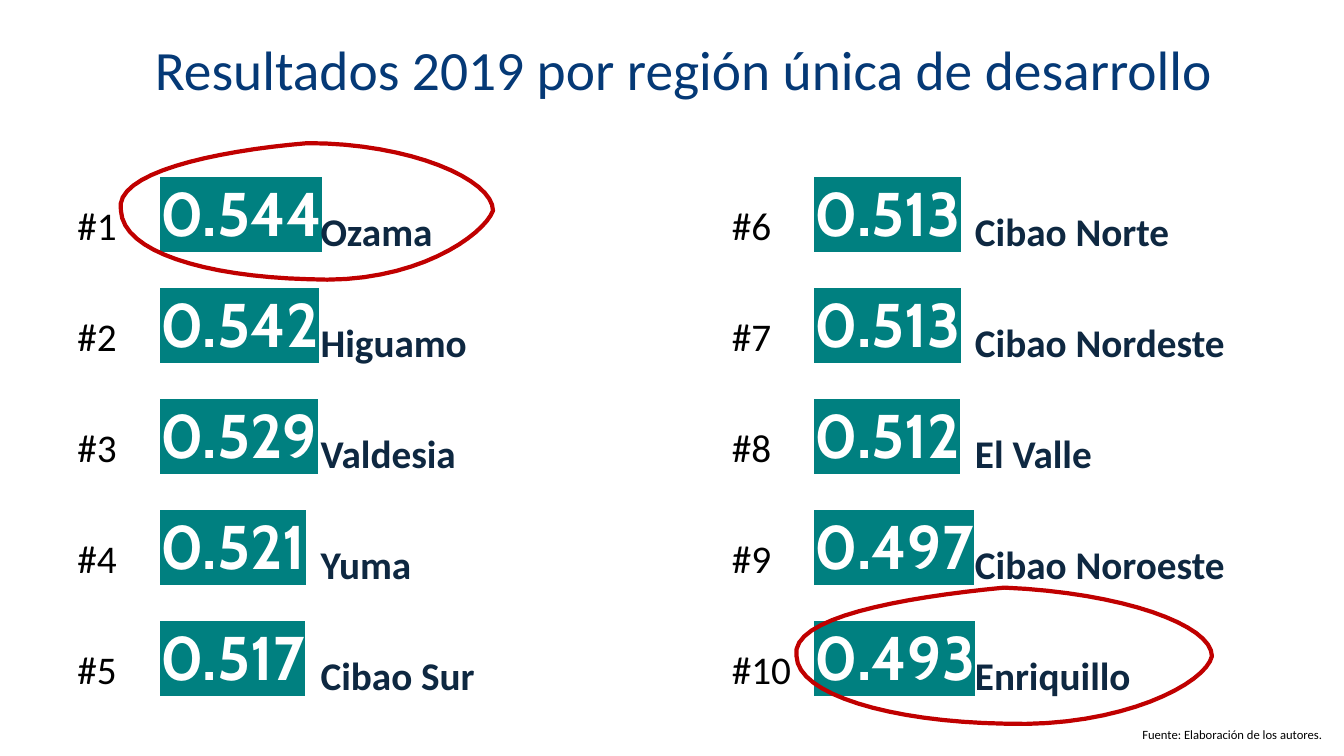
import pptx
import pptx.util
import pptx.dml.color
import pptx.enum.text
import pptx.oxml.ns
import lxml.etree

SCALE = 9144
WIDE, HIGH = 1333, 750
PITCH, STEP = 649, 110
STEPS = 16
ALIGN = pptx.enum.text.PP_ALIGN
ANCHOR = pptx.enum.text.MSO_ANCHOR

SCORES = [
    ("0.544", "Ozama"), ("0.542", "Higuamo"), ("0.529", "Valdesia"),
    ("0.521", "Yuma"), ("0.517", "Cibao Sur"), ("0.513", "Cibao Norte"),
    ("0.513", "Cibao Nordeste"), ("0.512", "El Valle"),
    ("0.497", "Cibao Noroeste"), ("0.493", "Enriquillo"),
]
OZAMA = [
    (120, 209),
    (112, 172), (211, 150), (305, 142),
    (407, 142), (489, 178), (489, 209),
    (480, 233), (412, 283), (305, 277),
    (203, 274), (122, 250), (120, 209),
]
ENRIQUILLO = [
    (790, 651),
    (783, 613), (893, 593), (996, 583),
    (1113, 588), (1202, 620), (1202, 651),
    (1196, 678), (1113, 722), (996, 718),
    (883, 716), (791, 689), (790, 651),
]


def px(count):
    return pptx.util.Emu(round(count * SCALE))


def color(code):
    return pptx.dml.color.RGBColor.from_string(code)


def style(shape, words, size, code, face="Calibri", bold=False):
    frame = shape.text_frame
    frame.text = words
    frame.word_wrap = True
    frame.auto_size = pptx.enum.text.MSO_AUTO_SIZE.NONE
    para = frame.paragraphs[0]
    font = para.runs[0].font
    font.name = face
    font.size = pptx.util.Pt(size)
    font.bold = bold
    font.color.rgb = color(code)
    return para


def label(slide, box, words, size, code, face="Calibri", bold=False):
    shape = slide.shapes.add_textbox(*map(px, box))
    style(shape, words, size, code, face, bold)
    return shape


def mark(shape, code):
    tag = pptx.oxml.ns.qn
    fill = shape.text_frame.paragraphs[0].runs[0].font._element.find(tag("a:solidFill"))
    light = lxml.etree.Element(tag("a:highlight"))
    lxml.etree.SubElement(light, tag("a:srgbClr")).set("val", code)
    fill.addnext(light)


def title(slide, words):
    shape = slide.shapes.title
    shape.left, shape.top, shape.width, shape.height = map(px, (79, 28, 1198, 88))
    para = style(shape, words, 39.6, "053976")
    para.alignment = ALIGN.CENTER
    para.line_spacing = 0.9
    shape.text_frame.vertical_anchor = ANCHOR.MIDDLE


def entry(slide, index, score, region):
    col, row = divmod(index, 5)
    left, down = col * PITCH, row * STEP
    value = label(slide, (149 + left, 169 + down, 434, 84), score, 44, "FFFFFF", "Cabin", True)
    mark(value, "008080")
    start = 318 + left
    name = label(slide, (start, 206 + down, min(492, WIDE - start), 47),
                 region, 28, "0E2841", bold=True)
    frame = name.text_frame
    frame.margin_left = frame.margin_top = frame.margin_right = frame.margin_bottom = 0
    frame.vertical_anchor = ANCHOR.MIDDLE
    frame.paragraphs[0].space_after = pptx.util.Pt(12)
    label(slide, (67 + left, 195 + down, 82, 57), f"#{index + 1}", 28, "000000")


def curve(points):
    for first in range(0, len(points) - 1, 3):
        a, b, c, d = points[first:first + 4]
        for step in range(1, STEPS + 1):
            t = step / STEPS
            u = 1 - t
            yield tuple(
                px(u**3 * a[k] + 3 * u * u * t * b[k] + 3 * u * t * t * c[k] + t**3 * d[k])
                for k in (0, 1)
            )


def ring(slide, points):
    pen = slide.shapes.build_freeform(*map(px, points[0]))
    pen.add_line_segments(list(curve(points)), close=True)
    shape = pen.convert_to_shape()
    shape.shadow.inherit = False
    shape.fill.background()
    shape.line.color.rgb = color("C00000")
    shape.line.width = pptx.util.Pt(3)


def source(slide, words):
    shape = label(slide, (466, 715, 855, 35), words, 9, "000000")
    para = shape.text_frame.paragraphs[0]
    para.alignment = ALIGN.RIGHT
    para.line_spacing = 1.06
    para.space_after = pptx.util.Pt(8)


def main():
    deck = pptx.Presentation()
    deck.slide_width, deck.slide_height = px(WIDE), px(HIGH)
    slide = deck.slides.add_slide(deck.slide_layouts[5])
    title(slide, "Resultados 2019 por región única de desarrollo")
    for index, (score, region) in enumerate(SCORES):
        entry(slide, index, score, region)
    source(slide, "Fuente: Elaboración de los autores.")
    for points in (OZAMA, ENRIQUILLO):
        ring(slide, points)
    deck.save("out.pptx")


if __name__ == "__main__":
    main()
